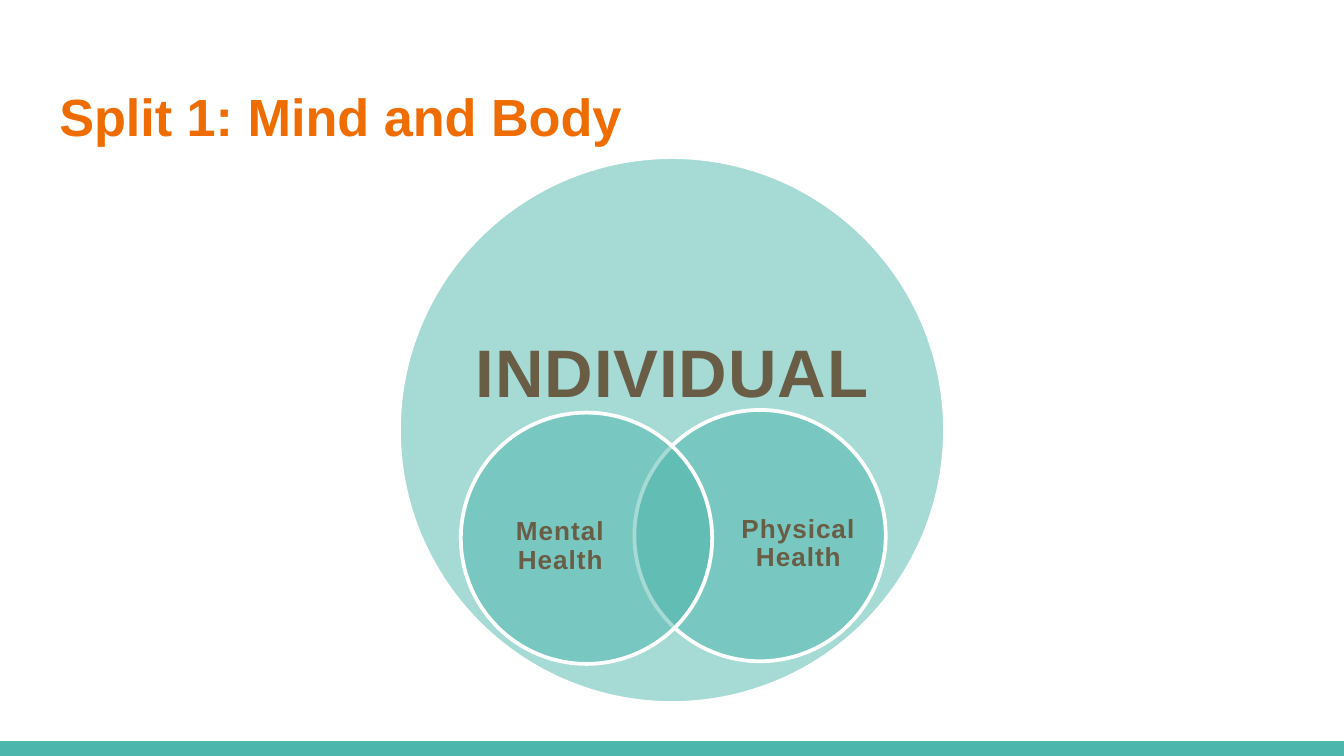
"""Build a slide with two overlapping health circles inside the individual."""
from lxml import etree
from pptx import Presentation
from pptx.dml.color import RGBColor
from pptx.enum.shapes import MSO_SHAPE
from pptx.enum.text import MSO_ANCHOR, PP_ALIGN
from pptx.oxml.ns import qn
from pptx.util import Cm, Pt

OVAL = MSO_SHAPE.OVAL
RECTANGLE = MSO_SHAPE.RECTANGLE
TOP, MIDDLE = MSO_ANCHOR.TOP, MSO_ANCHOR.MIDDLE
LEFT, CENTER = PP_ALIGN.LEFT, PP_ALIGN.CENTER
TITLE_ONLY = 5
FONT = "Arial"
COLORS = {"teal": "4DB6AC", "orange": "EF6C00", "brown": "695D46", "white": "FFFFFF"}
SMALL_DIAMETER = 4.75


def color(name):
    return RGBColor.from_string(COLORS[name])


def set_text(shape, text, size, color_name="brown", align=CENTER, anchor=MIDDLE,
             insets=(0, 0, 0, 0), line_spacing=0.9, tracking=0.5):
    frame = shape.text_frame
    frame.word_wrap = True
    frame.vertical_anchor = anchor
    frame.margin_left, frame.margin_top, frame.margin_right, frame.margin_bottom = map(Cm, insets)
    paragraph = frame.paragraphs[0]
    paragraph.alignment = align
    paragraph.line_spacing = line_spacing
    run = paragraph.add_run()
    run.text = text
    run.font.name = FONT
    run.font.size = Pt(size)
    run.font.bold = True
    run.font.color.rgb = color(color_name)
    if tracking:
        run.font._element.set("spc", str(int(tracking * 100)))


def add_filled(shapes, preset, left, top, width, height):
    shape = shapes.add_shape(preset, Cm(left), Cm(top), Cm(width), Cm(height))
    shape.shadow.inherit = False
    shape.fill.solid()
    shape.fill.fore_color.rgb = color("teal")
    return shape


def add_circle(shapes, left, top, diameter):
    circle = add_filled(shapes, OVAL, left, top, diameter, diameter)
    circle.line.color.rgb = color("white")
    circle.line.width = Pt(2)
    fill_color = circle._element.spPr.find(qn("a:solidFill"))[0]
    etree.SubElement(fill_color, qn("a:alpha")).set("val", "50000")


def add_label(shapes, text, left, top, width, height, **text_format):
    box = shapes.add_textbox(Cm(left), Cm(top), Cm(width), Cm(height))
    set_text(box, text, **text_format)


def add_title(slide, text):
    title = slide.shapes.title
    title.left, title.top, title.width, title.height = Cm(0.87), Cm(1.24), Cm(23.67), Cm(1.94)
    set_text(title, text, size=28, color_name="orange", align=LEFT, anchor=TOP,
             insets=(0.25, 0.35, 0.25, 0.25), line_spacing=1.0, tracking=0)


def add_venn(slide):
    shapes = slide.shapes.add_group_shape().shapes
    add_circle(shapes, 7.54, 2.97, 10.32)
    add_label(shapes, "INDIVIDUAL", 8.92, 4.78, 7.57, 4.65, size=36)
    for text, left, top, label_left, inset in (
        ("Physical Health", 11.99, 7.75, 13.44, 0.46),
        ("Mental Health", 8.71, 7.8, 9.17, 0),
    ):
        add_circle(shapes, left, top, SMALL_DIAMETER)
        add_label(shapes, text, label_left, top + 1.22, 2.84, 2.62,
                  size=14, insets=(inset, 0, 0, 0))


def main():
    presentation = Presentation()
    presentation.slide_width, presentation.slide_height = Cm(25.4), Cm(14.29)
    slide = presentation.slides.add_slide(presentation.slide_layouts[TITLE_ONLY])
    footer_bar = add_filled(slide.shapes, RECTANGLE, 0, 14.01, 25.4, 0.28)
    footer_bar.line.fill.background()
    add_title(slide, "Split 1: Mind and Body")
    add_venn(slide)
    presentation.save("out.pptx")


if __name__ == "__main__":
    main()
